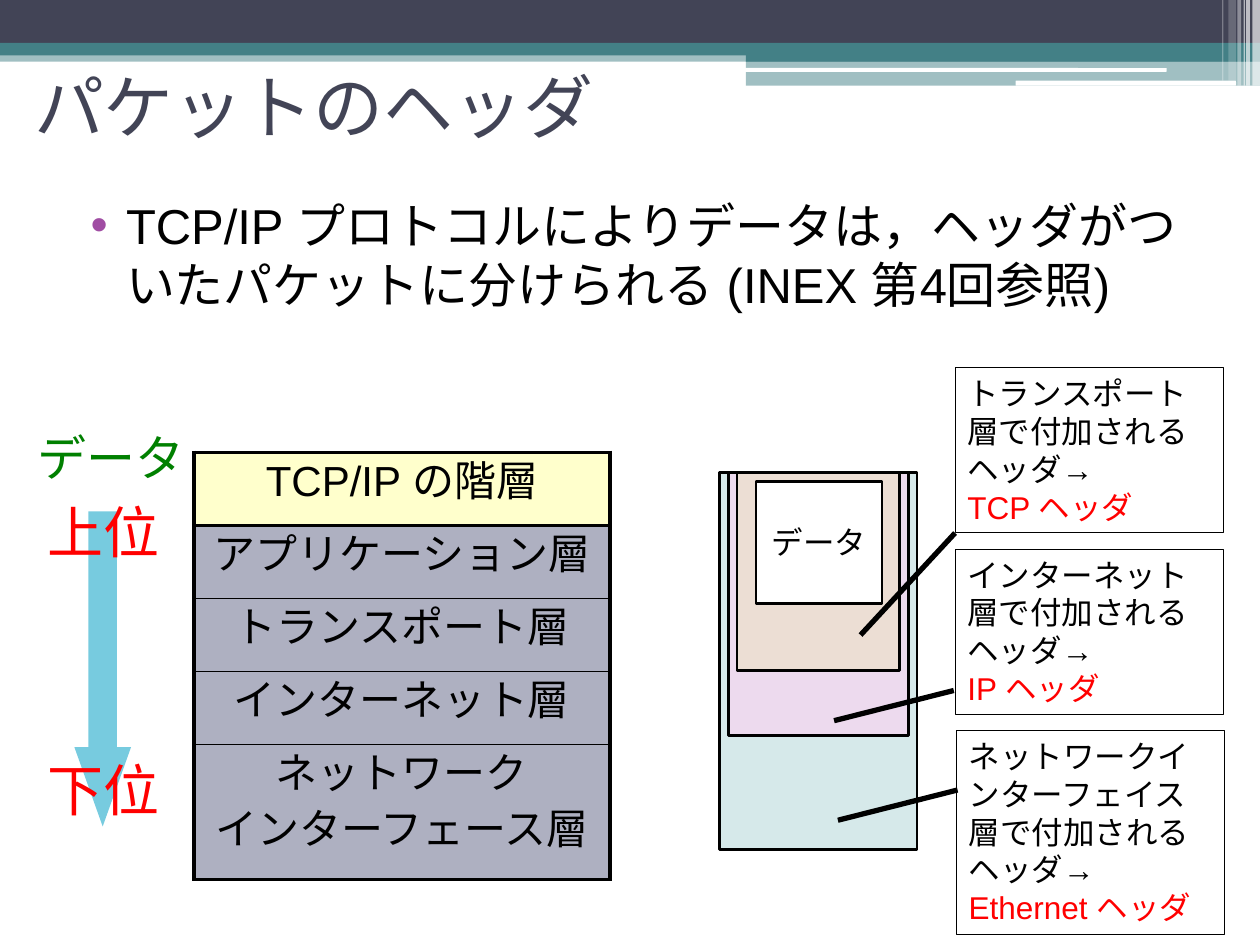
from lxml.etree import SubElement
from pptx import Presentation
from pptx.dml.color import RGBColor
from pptx.enum.shapes import MSO_CONNECTOR, MSO_SHAPE
from pptx.enum.text import MSO_ANCHOR, MSO_AUTO_SIZE, PP_ALIGN
from pptx.oxml.ns import qn
from pptx.util import Inches, Pt

GOTHIC = "Noto Sans CJK JP"
BLACK, RED, WHITE, TEAL, NAVY = "000000", "FF0000", "FFFFFF", "438086", "424456"


def rgb(value):
    """Return the colour for a hex string."""
    return RGBColor.from_string(value)


def inches(values):
    """Return the lengths in inches."""
    return [Inches(v) for v in values]


class Builder:
    """Hold the style and the slide being built."""

    font = "Arial"

    def __init__(self, prs):
        """Add a slide with a title and a body."""
        self.s = prs.slides.add_slide(prs.slide_layouts[1])

    def format(self, p, size, color, font=None):
        """Format the runs of a paragraph."""
        for r in p.runs:
            r.font.size, r.font.name = Pt(size), font or self.font
            r.font.color.rgb = rgb(color)
            SubElement(r.font._element, qn("a:ea"), typeface=font or self.font)

    def placeholder(self, index, box, text, size, color, anchor):
        """Move and fill a placeholder and return its paragraph."""
        sp = self.s.placeholders[index]
        sp.left, sp.top, sp.width, sp.height = inches(box)
        tf = sp.text_frame
        tf.text, tf.auto_size, tf.vertical_anchor = text, MSO_AUTO_SIZE.NONE, anchor
        p = tf.paragraphs[0]
        p.alignment = PP_ALIGN.LEFT
        self.format(p, size, color)
        return p

    def title(self, box, text):
        """Fill the title."""
        self.placeholder(0, box, text, 40, NAVY, MSO_ANCHOR.MIDDLE)

    def bullet(self, box, text):
        """Fill the body with one bulleted paragraph."""
        p = self.placeholder(1, box, text, 28, BLACK, MSO_ANCHOR.TOP)
        p.space_before = Pt(3)
        pPr = p._p.get_or_add_pPr()
        pPr.set("marL", str(Inches(0.4)))
        pPr.set("indent", str(Inches(-0.28)))
        SubElement(SubElement(pPr, qn("a:buClr")), qn("a:srgbClr"), val="A04DA3")
        SubElement(pPr, qn("a:buChar"), char="•")

    def shape(self, box, fill=None, line=None, width=1.5, kind=MSO_SHAPE.RECTANGLE,
              alpha=None, parent=None):
        """Add a preset shape."""
        sp = (parent or self.s).shapes.add_shape(kind, *inches(box))
        sp.shadow.inherit = False
        if fill:
            sp.fill.solid()
            sp.fill.fore_color.rgb = rgb(fill)
        else:
            sp.fill.background()
        if alpha:
            color = sp._element.spPr.find(".//" + qn("a:srgbClr"))
            SubElement(color, qn("a:alpha"), val=str(alpha * 1000))
        if line:
            sp.line.color.rgb, sp.line.width = rgb(line), Pt(width)
        else:
            sp.line.fill.background()
        return sp

    def label(self, box, text, size, color, wrap=False):
        """Add a text box."""
        tf = self.s.shapes.add_textbox(*inches(box)).text_frame
        tf.text, tf.word_wrap = text, wrap
        self.format(tf.paragraphs[0], size, color, GOTHIC)

    def callout(self, box, text, header, start, end):
        """Add a bordered note and the line that leads to it."""
        self.line(start, end)
        tf = self.shape(box, line=BLACK, width=0.5).text_frame
        tf.text, tf.word_wrap = f"{text}\n{header}", True
        tf.vertical_anchor = MSO_ANCHOR.TOP
        for p, color in zip(tf.paragraphs, (BLACK, RED)):
            p.alignment = PP_ALIGN.LEFT
            self.format(p, 18, color)

    def line(self, start, end):
        """Add a straight line."""
        c = self.s.shapes.add_connector(MSO_CONNECTOR.STRAIGHT, *inches(start + end))
        c.line.color.rgb, c.line.width = rgb(BLACK), Pt(3)
        SubElement(c._element.spPr, qn("a:effectLst"))

    def border(self, cell, side, width):
        """Draw one side of a cell."""
        ln = SubElement(cell._tc.get_or_add_tcPr(), qn("a:ln" + side), w=str(Pt(width)))
        SubElement(SubElement(ln, qn("a:solidFill")), qn("a:srgbClr"), val=BLACK)

    def layers(self, box, rows, heights):
        """Add the one-column table of layers."""
        table = self.s.shapes.add_table(len(rows), 1, *inches(box)).table
        table.first_row = table.horz_banding = False
        for i, (text, height) in enumerate(zip(rows, heights)):
            table.rows[i].height = Inches(height)
            cell = table.cell(i, 0)
            cell.text_frame.text = text
            for p in cell.text_frame.paragraphs:
                p.alignment, p.space_before = PP_ALIGN.CENTER, Pt(4.8)
                self.format(p, 24, BLACK)
            top = 2.25 if i < 2 else 1
            bottom = 2.25 if i in (0, len(rows) - 1) else 1
            for side, width in zip("LRTB", (2.25, 2.25, top, bottom)):
                self.border(cell, side, width)
            cell.fill.solid()
            cell.fill.fore_color.rgb = rgb("AEB0C1" if i else "FFFFCC")

    def banner(self):
        """Draw the bands at the top of the slide."""
        for box, fill, alpha in (
            ((0, 0.4, 10, 0.09), TEAL, 50),
            ((0, 0, 10, 0.34), NAVY, None),
            ((0, 0.34, 10, 0.1), TEAL, None),
            ((5.92, 0.39, 4.08, 0.1), TEAL, None),
            ((5.92, 0.48, 4.08, 0.2), TEAL, 50),
        ):
            self.shape(box, fill, alpha=alpha)
        for box in ((5.91, 0.54, 3.35, 0.03), (8.06, 0.64, 1.75, 0.04)):
            self.shape(box, WHITE, kind=MSO_SHAPE.ROUNDED_RECTANGLE)
        for left, width, height, alpha in (
            (9.94, 0.06, 0.68, 65), (9.89, 0.03, 0.68, 65), (9.87, 0.01, 0.68, 60),
            (9.82, 0.03, 0.68, 40), (9.75, 0.06, 0.64, 20), (9.7, 0.01, 0.64, 30),
        ):
            self.shape((left, 0, width, height), WHITE, alpha=alpha)

    def arrow(self, box):
        """Add the arrow that points down the layers."""
        sp = self.shape(box, "77CBDF", kind=MSO_SHAPE.UP_ARROW)
        sp.adjustments[0], sp.adjustments[1] = 0.5, 1.4
        sp._element.spPr.find(qn("a:xfrm")).set("flipV", "1")

    def packet(self):
        """Draw the nested headers around the data."""
        group = self.s.shapes.add_group_shape()
        for box, fill in (
            ((5.71, 3.75, 1.57, 2.99), "D6E9EA"),
            ((5.78, 3.75, 1.43, 2.09), "EDDAEE"),
            ((5.85, 3.75, 1.29, 1.57), "ECDED4"),
            ((6, 3.82, 1, 0.97), WHITE),
        ):
            sp = self.shape(box, fill, BLACK, parent=group)
        tf = sp.text_frame
        tf.text, tf.vertical_anchor = "データ", MSO_ANCHOR.MIDDLE
        tf.paragraphs[0].alignment = PP_ALIGN.CENTER
        self.format(tf.paragraphs[0], 18, BLACK, GOTHIC)


def main():
    """Build and save the slide."""
    prs = Presentation()
    prs.slide_width, prs.slide_height = Inches(10), Inches(7.5)
    b = Builder(prs)
    b.banner()
    b.title((0.17, 0.25, 5.75, 1.17), "パケットのヘッダ")
    b.bullet((0.5, 1.5, 9, 1.21),
             "TCP/IP プロトコルによりデータは，ヘッダがついたパケットに分けられる (INEX 第4回参照)")
    b.layers((1.54, 3.59, 3.3, 3.2),
             ("TCP/IP の階層", "アプリケーション層", "トランスポート層", "インターネット層",
              "ネットワーク\nインターフェース層"), (0.58, 0.58, 0.58, 0.58, 1.07))
    b.arrow((0.59, 4.06, 0.45, 2.5))
    b.label((0.28, 3.9, 1.1, 0.64), "上位", 32, RED)
    b.label((0.28, 5.95, 1.1, 0.64), "下位", 32, RED)
    b.label((0.2, 3.34, 1.39, 0.57), "データ", 28, "008000", wrap=True)
    b.packet()
    for box, layer, header, start, end in (
        ((7.58, 2.92, 2.13, 1.31), "トランスポート", "TCP", (6.83, 5.04), (7.58, 4.23)),
        ((7.58, 4.36, 2.13, 1.31), "インターネット", "IP", (6.62, 5.72), (7.57, 5.48)),
        ((7.59, 5.8, 2.13, 1.62), "ネットワークインターフェイス", "Ethernet",
         (6.65, 6.51), (7.6, 6.27)),
    ):
        b.callout(box, f"{layer}層で付加されるヘッダ→", f"{header} ヘッダ", start, end)


    prs.save("out.pptx")


if __name__ == "__main__":
    main()
